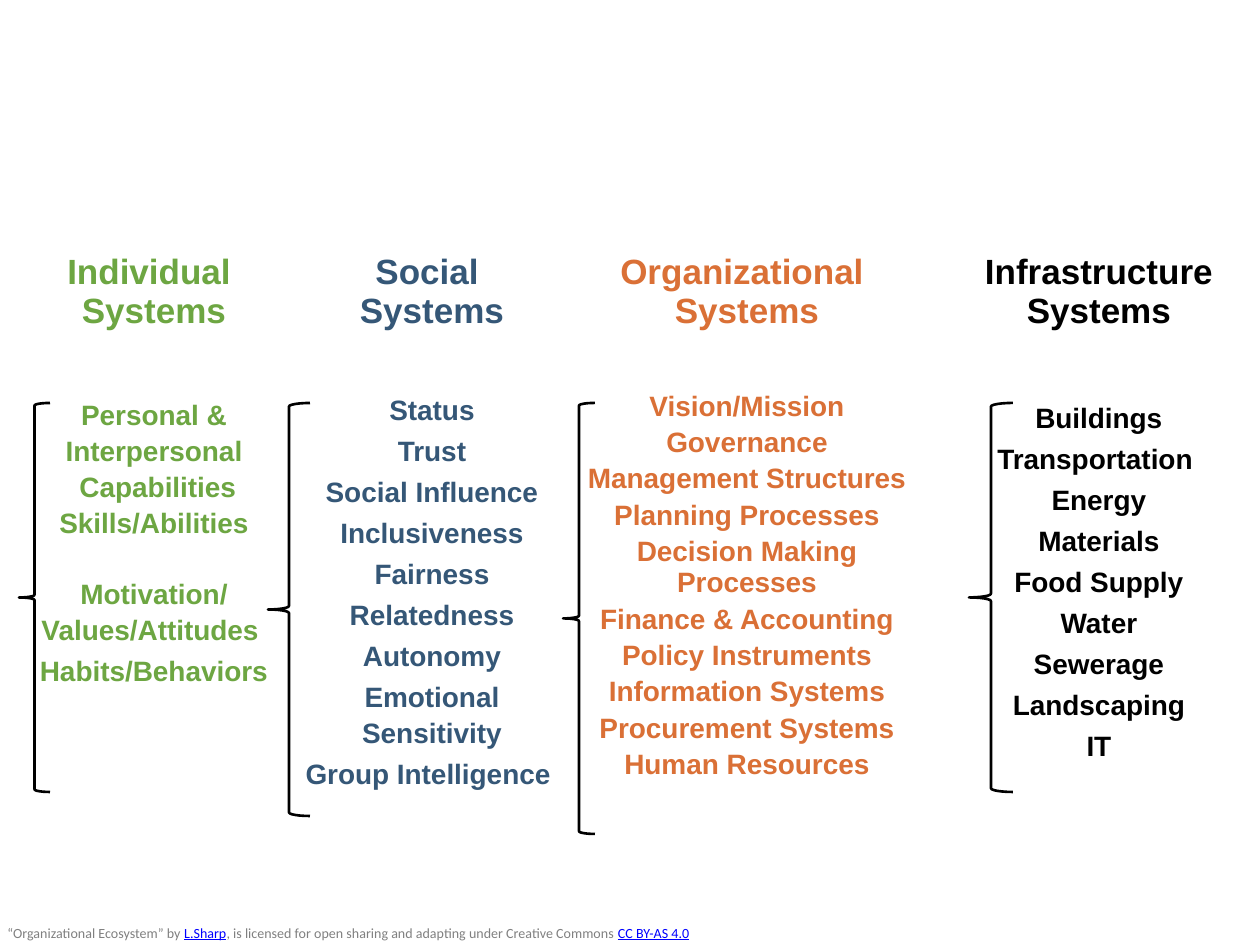
from dataclasses import dataclass

from pptx import Presentation
from pptx.dml.color import RGBColor
from pptx.enum.shapes import MSO_SHAPE as Shape
from pptx.enum.text import PP_ALIGN as Align
from pptx.util import Emu, Pt

SCALE = 914400 // 126  # EMU per px
COLORS = {
    "individual": "6DA642",
    "social": "355777",
    "organizational": "DA7036",
    "infrastructure": "000000",
    "brace": "000000",
    "credit": "808080",
    "link": "0000FF",
}


@dataclass
class Line:
    text: str
    before: float = 0
    after: float = 0


@dataclass
class System:
    color: str
    width: int
    heading: list[Line]
    body: list[Line]
    body_top: int
    spacing: float = 1.15


@dataclass
class Brace:
    left: int
    width: int
    height: int


def px(length: int) -> Emu:
    return Emu(length * SCALE)


def rgb(name: str) -> RGBColor:
    return RGBColor.from_string(COLORS[name])


def lines(*texts: str, after: float = 0) -> list[Line]:
    return [Line(text, after=after) for text in texts]


def add_text(para, text: str, *, font: str, size: float, color: str,
             bold: bool = False, underline: bool = False) -> None:
    span = para.add_run()
    span.text = text
    span.font.name = font
    span.font.size = Pt(size)
    span.font.bold = bold
    span.font.underline = underline
    span.font.color.rgb = rgb(color)


def fill_cell(cell, content: list[Line], *, top: int, size: float,
              color: str, spacing: float = 1.0) -> None:
    cell.fill.background()
    cell.margin_left = cell.margin_right = px(8)
    cell.margin_top, cell.margin_bottom = px(top), 0
    frame = cell.text_frame
    for index, line in enumerate(content):
        para = frame.add_paragraph() if index else frame.paragraphs[0]
        para.alignment = Align.CENTER
        para.line_spacing = spacing
        para.space_before = Pt(line.before)
        para.space_after = Pt(line.after)
        add_text(para, line.text, font="Arial", size=size, color=color, bold=True)


def add_brace(page, brace: Brace) -> None:
    shape = page.shapes.add_shape(Shape.LEFT_BRACE, px(brace.left), px(403),
                                  px(brace.width), px(brace.height))
    shape.shadow.inherit = False
    shape.fill.background()
    shape.line.color.rgb = rgb("brace")
    shape.line.width = Pt(1.5)


SYSTEMS = [
    System("individual", 278, lines("Individual ", "Systems"),
           lines("Personal &", "Interpersonal", " Capabilities", "Skills/Abilities")
           + [Line("Motivation/", before=20.3)]
           + lines("Values/Attitudes ", "Habits/Behaviors", after=3), 41),
    System("social", 278, lines("Social ", "Systems"),
           lines("Status", "Trust", "Social Influence", "Inclusiveness", "Fairness",
                 "Relatedness", "Autonomy", "Emotional Sensitivity",
                 "Group Intelligence ", after=3), 36),
    System("organizational", 352, lines("Organizational ", "Systems"),
           lines("Vision/Mission", "Governance", "Management Structures",
                 "Planning Processes", "Decision Making Processes",
                 "Finance & Accounting", "Policy Instruments",
                 "Information Systems", "Procurement Systems",
                 "Human Resources", after=3), 36, spacing=1.0),
    System("infrastructure", 352, lines("Infrastructure Systems"),
           lines("Buildings", "Transportation ", "Energy", "Materials", "Food Supply",
                 "Water", "Sewerage", "Landscaping", "IT", after=3), 44),
]
BRACES = [Brace(563, 32, 431), Brace(268, 42, 413),
          Brace(969, 44, 389), Brace(19, 31, 389)]
CREDIT = [
    ("“Organizational Ecosystem” by ", False),
    ("L.Sharp", True),
    (", is licensed for open sharing and adapting under Creative Commons ", False),
    ("CC BY-AS 4.0", True),
]


def main() -> None:
    deck = Presentation()
    deck.slide_width, deck.slide_height = px(1260), px(945)
    page = deck.slides.add_slide(deck.slide_layouts[6])

    # Table of systems: headings above their elements
    row_heights = (141, 664)
    table = page.shapes.add_table(
        2, len(SYSTEMS), px(15), px(214),
        px(sum(system.width for system in SYSTEMS)), px(sum(row_heights))).table
    table.first_row = table.horz_banding = False
    for row, height in zip(table.rows, row_heights):
        row.height = px(height)
    for index, system in enumerate(SYSTEMS):
        table.columns[index].width = px(system.width)
        fill_cell(table.cell(0, index), system.heading, top=39, size=20,
                  color=system.color)
        fill_cell(table.cell(1, index), system.body, top=system.body_top, size=16,
                  color=system.color, spacing=system.spacing)

    # Braces beside the columns
    for brace in BRACES:
        add_brace(page, brace)

    # Credit line
    box = page.shapes.add_textbox(px(-5), px(918), px(1247), px(30))
    box.text_frame.word_wrap = True
    para = box.text_frame.paragraphs[0]
    for text, linked in CREDIT:
        add_text(para, text, font="Calibri", size=8,
                 color="link" if linked else "credit", underline=linked)

    deck.save("out.pptx")


if __name__ == "__main__":
    main()
